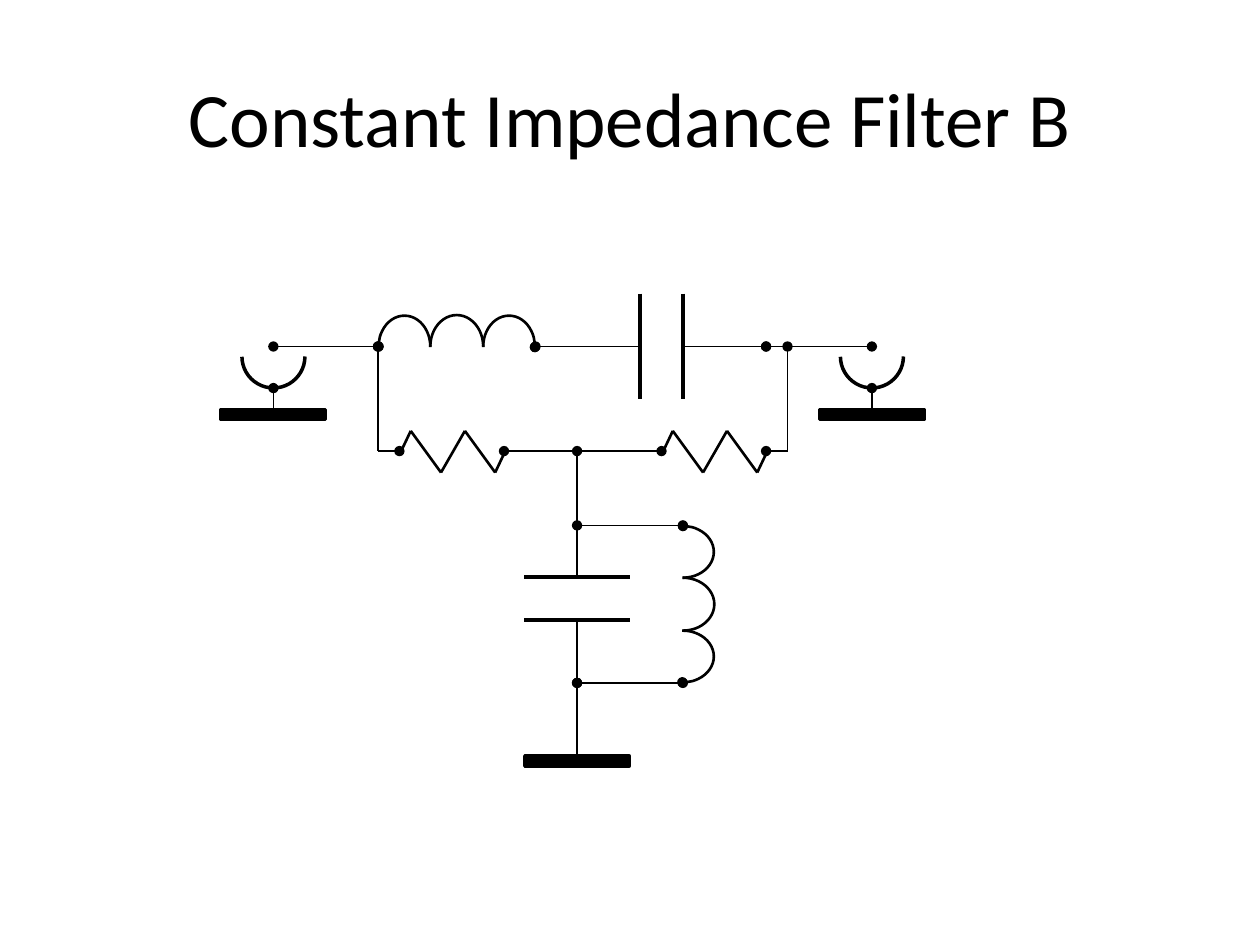
from itertools import pairwise

from lxml import etree
from pptx import Presentation
from pptx.dml.color import RGBColor
from pptx.enum.shapes import MSO_CONNECTOR, MSO_SHAPE
from pptx.enum.text import MSO_ANCHOR, PP_ALIGN
from pptx.oxml.ns import qn
from pptx.util import Inches, Pt

ARC, RECTANGLE = MSO_SHAPE.ARC, MSO_SHAPE.RECTANGLE
STRAIGHT = MSO_CONNECTOR.STRAIGHT
CENTER, MIDDLE = PP_ALIGN.CENTER, MSO_ANCHOR.MIDDLE
HEAD, TAIL = "headEnd", "tailEnd"
TOP_SITE = 0


def color(hex_text):
    return RGBColor.from_string(hex_text)


class Circuit:
    """Draws circuit symbols in one style on the current page."""

    font = "Calibri"
    ink = "000000"
    wire_width, symbol_width, plate_width = 1, 1.5, 2

    def __init__(self, page):
        self.page = page

    def title(self, text, left, top, width, height):
        box = self.page.shapes.add_textbox(
            Inches(left), Inches(top), Inches(width), Inches(height))
        frame = box.text_frame
        frame.word_wrap = True
        frame.vertical_anchor = MIDDLE
        para = frame.paragraphs[0]
        para.alignment = CENTER
        span = para.add_run()
        span.text = text
        span.font.name = self.font
        span.font.size = Pt(44)
        span.font.color.rgb = color(self.ink)

    def outline(self, item, width, dots=()):
        """Set the line and put round dots on the named ends."""
        item.line.color.rgb = color(self.ink)
        item.line.width = Pt(width)
        line_xml = item.line._get_or_add_ln()
        for end in (HEAD, TAIL):
            if end in dots:
                etree.SubElement(line_xml, qn(f"a:{end}"), type="oval")

    def line(self, start, end, *dots, width=wire_width):
        wire = self.page.shapes.add_connector(
            STRAIGHT, *(Inches(value) for value in (*start, *end)))
        self.outline(wire, width, dots)
        etree.SubElement(wire._element.spPr, qn("a:effectLst"))
        return wire

    def shape(self, kind, center, width, height, line_width, dots=()):
        x, y = center
        item = self.page.shapes.add_shape(
            kind, Inches(x - width / 2), Inches(y - height / 2),
            Inches(width), Inches(height))
        item.shadow.inherit = False
        self.outline(item, line_width, dots)
        return item

    def arc(self, center, size, end_angle, rotation, line_width, dots=()):
        item = self.shape(ARC, center, *size, line_width, dots)
        item.fill.background()
        item.adjustments[0] = 162
        item.adjustments[1] = end_angle
        item.rotation = rotation

    def coil(self, start, upright):
        """Three half turns, running down if upright, else to the right."""
        x, y = start
        for turn, dots in enumerate([(HEAD,), (), (TAIL,)]):
            along = 0.21 + 0.415 * turn
            center = (x, y + along) if upright else (x + along, y)
            size = (0.5, 0.42) if turn == 1 else (0.49, 0.41)
            self.arc(center, size, 54.86, 0 if upright else 270,
                     self.symbol_width, dots)

    def resistor(self, x, y):
        zigzag = [(0, 0.03), (0.09, -0.16), (0.33, 0.17),
                  (0.52, -0.16), (0.76, 0.17), (0.85, -0.02)]
        points = [(x + dx, y + dy) for dx, dy in zigzag]
        for start, end in pairwise(points):
            self.line(start, end, width=self.symbol_width)

    def capacitor(self, center, upright):
        """Two plates 0.34 apart; the plates lie flat if upright."""
        x, y = center
        for gap in (-0.17, 0.17):
            if upright:
                ends = (x - 0.42, y + gap), (x + 0.42, y + gap)
            else:
                ends = (x + gap, y - 0.42), (x + gap, y + 0.42)
            self.line(*ends, width=self.plate_width)

    def ground(self, node, top):
        """Ground bar wired up to the node above it."""
        bar = self.shape(RECTANGLE, (node[0], top + 0.04), 0.83, 0.08,
                         self.plate_width)
        bar.fill.solid()
        bar.fill.fore_color.rgb = color(self.ink)
        wire = self.line(node, (node[0], top), HEAD)
        wire.end_connect(bar, TOP_SITE)

    def coaxial_port(self, x, y):
        self.arc((x, y + 0.08), (0.5, 0.5), 53.69, 90, self.plate_width)
        self.ground((x, y + 0.33), y + 0.5)


def main():
    deck = Presentation()
    deck.slide_width, deck.slide_height = Inches(10), Inches(7.5)
    circuit = Circuit(deck.slides.add_slide(deck.slide_layouts[6]))
    circuit.title("Constant Impedance Filter B", 0.5, 0.3, 9, 1.25)

    series_y, bridge_y = 2.75, 3.58
    tank_top, tank_bottom = 4.17, 5.42
    input_x, output_x = 2.17, 6.92
    left_x, middle_x, right_x = 3, 4.58, 6.25
    tank_coil_x = 5.42

    # Series branch between the two ports
    circuit.coaxial_port(input_x, series_y)
    circuit.line((input_x, series_y), (left_x, series_y), HEAD, TAIL)
    circuit.coil((left_x, series_y), upright=False)
    circuit.line((4.25, series_y), (5.08, series_y), HEAD)
    circuit.capacitor((5.25, series_y), upright=False)
    circuit.line((5.42, series_y), (6.08, series_y), TAIL)
    circuit.line((6.08, series_y), (output_x, series_y), HEAD, TAIL)
    circuit.coaxial_port(output_x, series_y)

    # Resistor bridge
    for side_x, resistor_end in ((left_x, 3.17), (right_x, 6.08)):
        circuit.line((side_x, series_y), (side_x, bridge_y), HEAD)
        circuit.line((side_x, bridge_y), (resistor_end, bridge_y), TAIL)
    for resistor_x in (3.17, 5.25):
        circuit.resistor(resistor_x, bridge_y)
    circuit.line((4, bridge_y), (5.25, bridge_y), HEAD, TAIL)

    # Parallel branch to ground
    circuit.line((middle_x, bridge_y), (middle_x, tank_top), HEAD)
    circuit.line((middle_x, tank_top), (middle_x, 4.58))
    circuit.capacitor((middle_x, 4.75), upright=True)
    circuit.line((middle_x, 4.92), (middle_x, tank_bottom))
    for y in (tank_top, tank_bottom):
        circuit.line((middle_x, y), (tank_coil_x, y), HEAD, TAIL)
    circuit.coil((tank_coil_x, tank_top), upright=True)
    circuit.ground((middle_x, tank_bottom), 6)

    deck.save("out.pptx")


if __name__ == "__main__":
    main()
